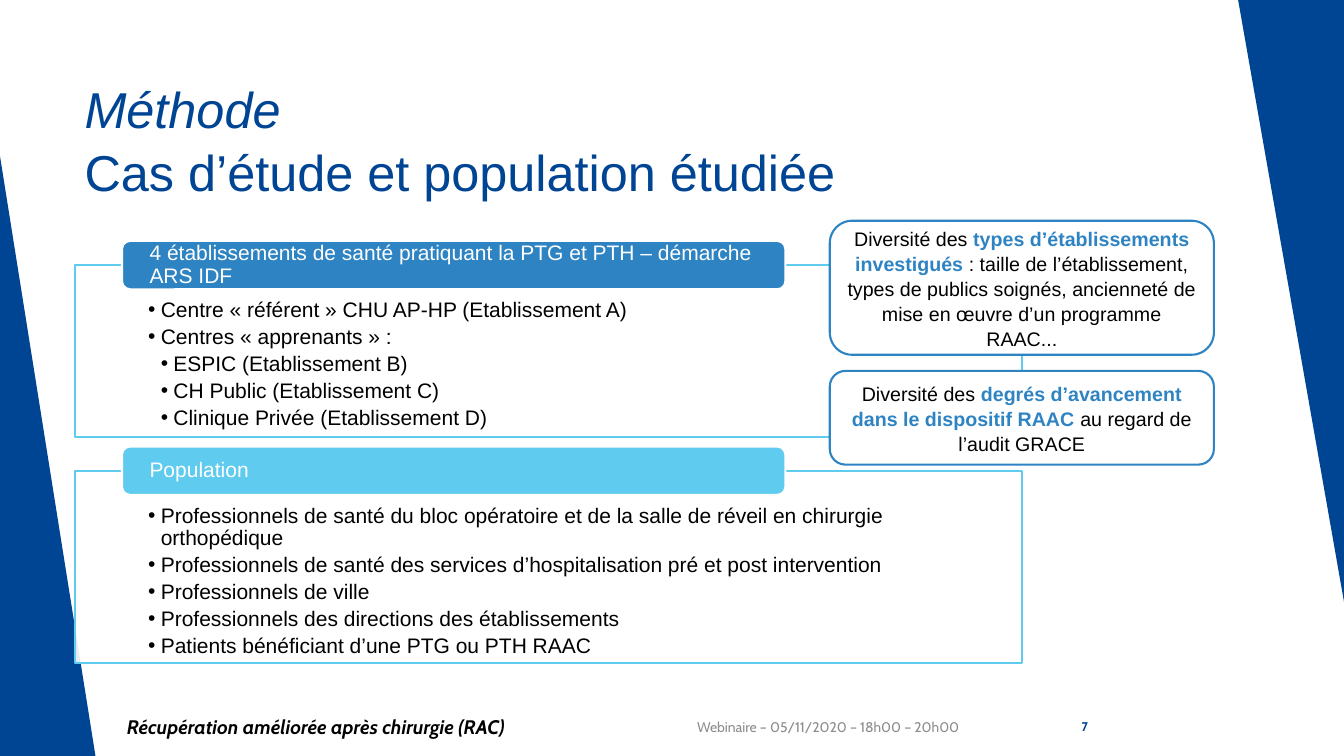
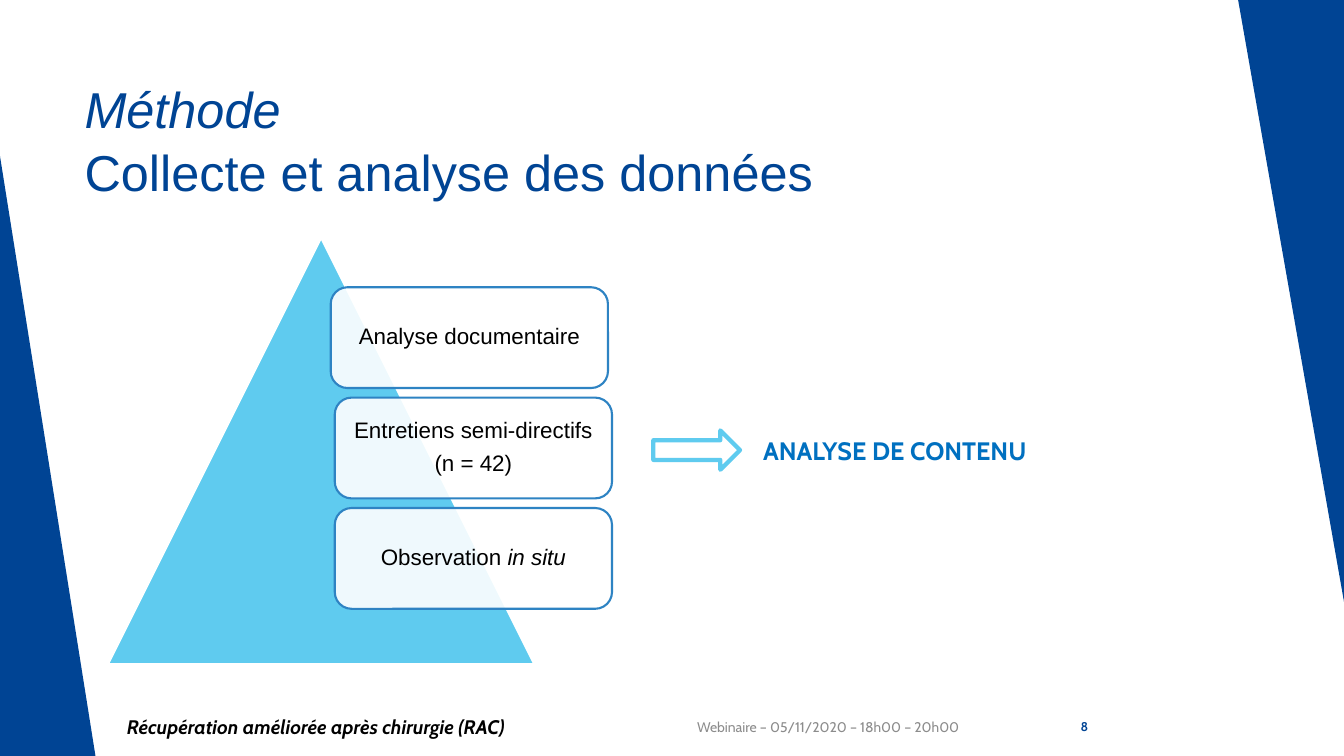
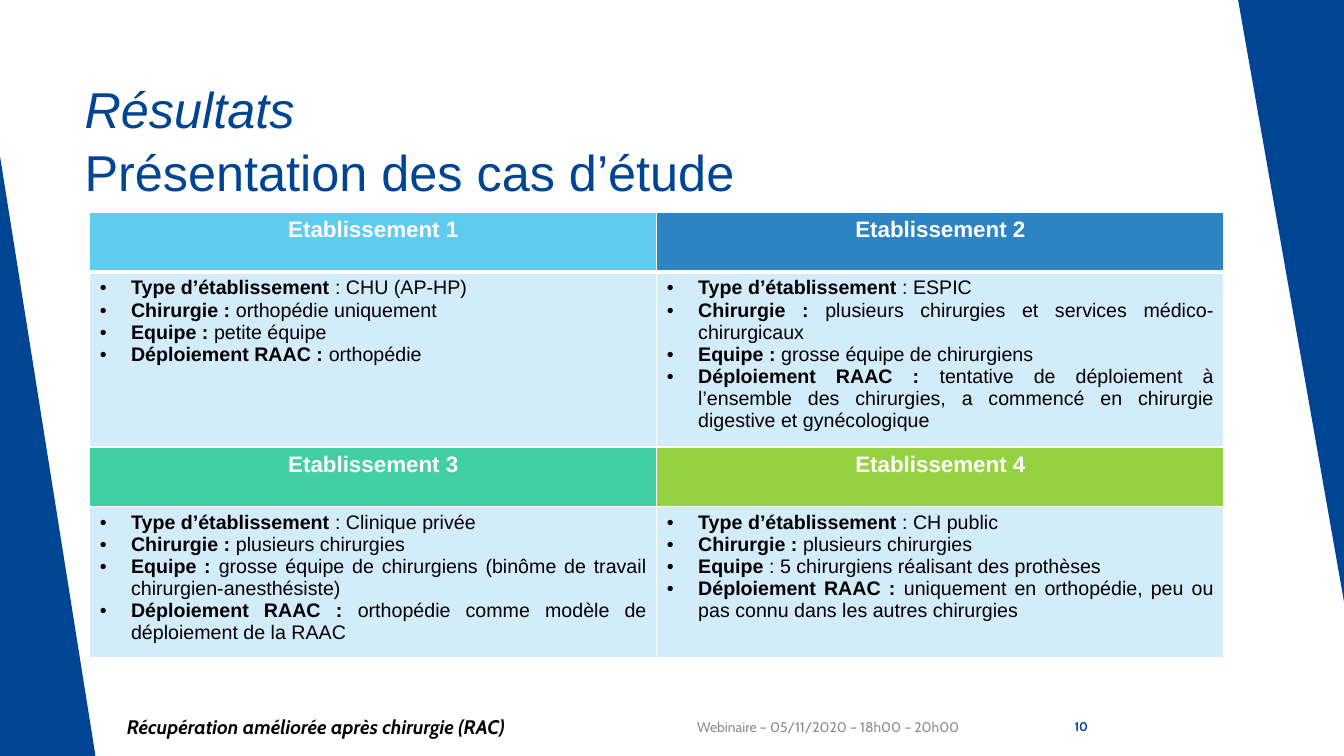
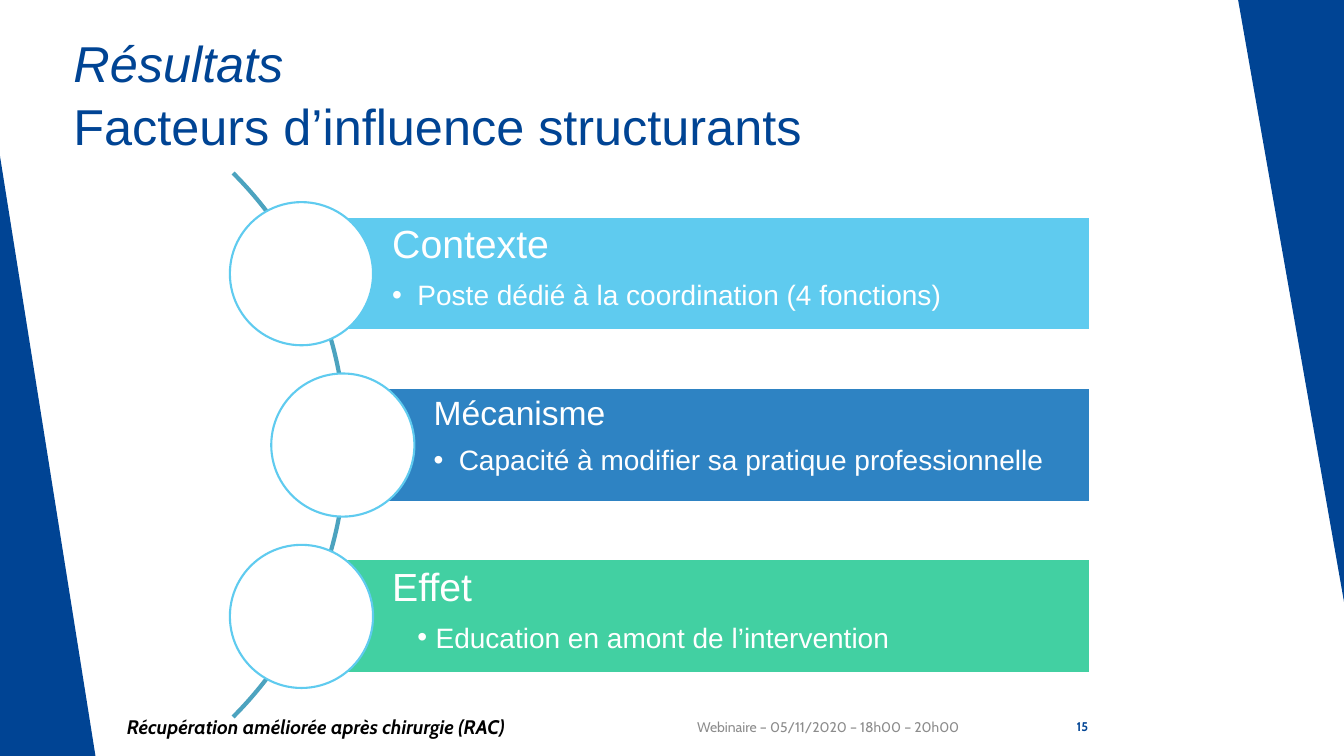
from lxml import etree
from pptx import Presentation
from pptx.dml.color import RGBColor
from pptx.enum.shapes import MSO_SHAPE as Shape
from pptx.enum.text import MSO_ANCHOR as Anchor, PP_ALIGN as Align
from pptx.oxml.ns import qn
from pptx.util import Inches, Pt

NAVY = RGBColor(0x00, 0x44, 0x94)
SKY = RGBColor(0x5F, 0xCB, 0xEF)
BLUE = RGBColor(0x2E, 0x83, 0xC3)
GREEN = RGBColor(0x42, 0xD0, 0xA2)
LIME = RGBColor(0x96, 0xD1, 0x41)
PALE = RGBColor(0xD2, 0xEC, 0xF9)
TEAL = RGBColor(0x4C, 0xA3, 0xBF)
ACCENT = RGBColor(0x00, 0x70, 0xC0)
GREY = RGBColor(0x8C, 0x8C, 0x8C)
BLACK = RGBColor(0, 0, 0)
WHITE = RGBColor(0xFF, 0xFF, 0xFF)

BODY_FONT = "Arial"
FOOTER_FONT = "Cabin"
CABIN_PITCH = 1.06


# Shared helpers
def add_text(frame, text, size=14, color=BLACK, font=BODY_FONT, bold=False, italic=False,
             align=Align.LEFT, gap=0, spacing=None, bullet=None):
    """Add one paragraph; text is a string or a list of strings and (string, format) pairs.

    bullet is (left indent, hanging width) in inches; gap is the space above, except at the top.
    """
    paragraph = frame.paragraphs[0]
    if paragraph.runs:
        paragraph = frame.add_paragraph()
        if gap:
            paragraph.space_before = Pt(gap)
    paragraph.alignment = align
    if spacing:
        paragraph.line_spacing = spacing
    if bullet:
        left, hang = bullet
        properties = paragraph._p.get_or_add_pPr()
        properties.set("marL", str(Inches(left)))
        properties.set("indent", str(-Inches(hang)))
        etree.SubElement(properties, qn("a:buFont"), typeface=BODY_FONT)
        etree.SubElement(properties, qn("a:buChar"), char="•")
    for part in [text] if isinstance(text, str) else text:
        words, changes = (part, {}) if isinstance(part, str) else part
        look = {"bold": bold, "italic": italic, "color": color, **changes}
        run = paragraph.add_run()
        run.text = words
        run.font.name = font
        run.font.size = Pt(size)
        run.font.bold = look["bold"]
        run.font.italic = look["italic"]
        run.font.color.rgb = look["color"]


def set_frame(frame, margins=(0.1, 0.05, 0.1, 0.05), anchor=Anchor.MIDDLE):
    frame.word_wrap = True
    frame.vertical_anchor = anchor
    (frame.margin_left, frame.margin_top,
     frame.margin_right, frame.margin_bottom) = map(Inches, margins)
    return frame


def add_box(slide, box, **options):
    return set_frame(slide.shapes.add_textbox(*map(Inches, box)).text_frame, **options)


def add_shape(slide, kind, box, fill=None, line=None, width=1.5, opacity=None):
    shape = slide.shapes.add_shape(kind, *map(Inches, box))
    shape.shadow.inherit = False
    if fill is None:
        shape.fill.background()
    else:
        shape.fill.solid()
        shape.fill.fore_color.rgb = fill
    if opacity:
        color = shape._element.spPr.find(qn("a:solidFill"))[0]
        etree.SubElement(color, qn("a:alpha"), val=str(opacity * 1000))
    if line is None:
        shape.line.fill.background()
    else:
        shape.line.color.rgb = line
        shape.line.width = Pt(width)
    return shape


def start_slide(presentation, section, title, number, corner=(0.74, 0.67)):
    """Blank slide with side bands, title and footer."""
    slide = presentation.slides.add_slide(presentation.slide_layouts[6])
    add_shape(slide, Shape.RIGHT_TRIANGLE, (0, 1.55, 0.95, 5.97), NAVY)
    add_shape(slide, Shape.RIGHT_TRIANGLE, (12.28, 0, 1.05, 5.97), NAVY).rotation = 180

    frame = add_box(slide, (*corner, 9.4, 1.44))
    add_text(frame, section, size=36, color=NAVY, italic=True)
    add_text(frame, title, size=36, color=NAVY, gap=2)

    add_text(add_box(slide, (6.72, 7.01, 2.89, 0.4)), "Webinaire – 05/11/2020 – 18h00 – 20h00",
             size=10, color=GREY, font=FOOTER_FONT, align=Align.RIGHT)
    add_text(add_box(slide, (1.16, 7.01, 5.35, 0.4)), "Récupération améliorée après chirurgie (RAC)",
             size=14, font=FOOTER_FONT, bold=True, italic=True)
    add_text(add_box(slide, (10.14, 7.01, 0.75, 0.4)), str(number),
             size=9, color=NAVY, font=FOOTER_FONT, bold=True, align=Align.RIGHT)
    return slide


# Slide: cases and population
def add_framed_list(slide, box, heading, color, items):
    """Outlined list whose heading tab straddles the top edge."""
    left, top, _, _ = box
    panel = add_shape(slide, Shape.RECTANGLE, box, WHITE, SKY, opacity=90)
    frame = set_frame(panel.text_frame, (0.73, 0.34, 0.73, 0.12), Anchor.TOP)
    for level, item in items:
        add_text(frame, item, size=15, spacing=0.9, gap=3, bullet=(0.125 * level, 0.125))
    tab = add_shape(slide, Shape.ROUNDED_RECTANGLE, (left + 0.47, top - 0.24, 6.58, 0.48), color, WHITE)
    add_text(set_frame(tab.text_frame, (0.25, 0, 0.25, 0)), heading, size=15, color=WHITE, spacing=0.9)


def add_callout(slide, box, before, key, after):
    callout = add_shape(slide, Shape.ROUNDED_RECTANGLE, box, WHITE, BLUE)
    add_text(set_frame(callout.text_frame), [before, (key, {"bold": True, "color": BLUE}), after],
             align=Align.CENTER, spacing=CABIN_PITCH)


def build_population(presentation):
    slide = start_slide(presentation, "Méthode", "Cas d’étude et population étudiée", 7)
    add_framed_list(slide, (0.74, 2.63, 9.4, 1.71),
                    "4 établissements de santé pratiquant la PTG et PTH – démarche ARS IDF", BLUE, [
                        (1, "Centre « référent » CHU AP-HP (Etablissement A)"),
                        (1, "Centres « apprenants » :"),
                        (2, "ESPIC (Etablissement B)"),
                        (2, "CH Public (Etablissement C)"),
                        (2, "Clinique Privée (Etablissement D)"),
                    ])
    add_framed_list(slide, (0.74, 4.67, 9.4, 1.91), "Population", SKY, [
        (1, "Professionnels de santé du bloc opératoire et de la salle de réveil en chirurgie orthopédique"),
        (1, "Professionnels de santé des services d’hospitalisation pré et post intervention"),
        (1, "Professionnels de ville"),
        (1, "Professionnels des directions des établissements"),
        (1, "Patients bénéficiant d’une PTG ou PTH RAAC"),
    ])
    add_callout(slide, (8.23, 2.19, 3.81, 1.33), "Diversité des ", "types d’établissements investigués ",
                ": taille de l’établissement, types de publics soignés, "
                "ancienneté de mise en œuvre d’un programme RAAC...")
    add_callout(slide, (8.23, 3.68, 3.81, 0.93), "Diversité des ",
                "degrés d’avancement dans le dispositif RAAC ", "au regard de l’audit GRACE")


# Slide: data collection
def add_pyramid(slide, left, top, side, methods):
    """Triangle with method cards stacked down its right edge."""
    add_shape(slide, Shape.ISOSCELES_TRIANGLE, (left, top, side, side), SKY, WHITE)
    for index, (offset, lines) in enumerate(methods):
        card = add_shape(slide, Shape.ROUNDED_RECTANGLE,
                         (left + offset, top + 0.49 + 1.095 * index, 2.75, 1), WHITE, BLUE, opacity=90)
        frame = set_frame(card.text_frame, (0.07,) * 4)
        for line in lines:
            add_text(frame, line, size=16, align=Align.CENTER, spacing=0.9, gap=6)


def build_collection(presentation):
    slide = start_slide(presentation, "Méthode", "Collecte et analyse des données", 8)
    add_pyramid(slide, 1.07, 2.36, 4.23, [
        (2.21, ["Analyse documentaire"]),
        (2.25, ["Entretiens semi-directifs", "(n = 42)"]),
        (2.25, [["Observation ", ("in situ", {"italic": True})]]),
    ])
    add_shape(slide, Shape.RIGHT_ARROW, (6.48, 4.27, 0.86, 0.39), line=SKY, width=3)
    add_text(add_box(slide, (7.47, 4.27, 2.97, 0.4), anchor=Anchor.TOP), "ANALYSE DE CONTENU",
             size=18, color=ACCENT, font=FOOTER_FONT, bold=True)


# Slide: table of cases
def fill_cell(cell, color, top=1, bottom=1):
    """Solid fill and white borders, with widths in points."""
    cell.fill.solid()
    cell.fill.fore_color.rgb = color
    properties = cell._tc.get_or_add_tcPr()
    for index, (side, width) in enumerate((("L", 1), ("R", 1), ("T", top), ("B", bottom))):
        line = etree.Element(qn(f"a:ln{side}"), w=str(Pt(width)))
        fill = etree.SubElement(line, qn("a:solidFill"))
        etree.SubElement(fill, qn("a:srgbClr"), val=str(WHITE))
        properties.insert(index, line)


def add_case_table(slide, left, top, width, heights, cases):
    """Two cases per band, each a heading cell above a list cell."""
    table = slide.shapes.add_table(4, 2, *map(Inches, (left, top, width, sum(heights)))).table
    table.first_row = table.horz_banding = False
    for row, height in zip(table.rows, heights):
        row.height = Inches(height)
    for index, (heading, color, facts) in enumerate(cases):
        band, column = divmod(index, 2)
        rule = 1 if band else 3
        head, body = table.cell(2 * band, column), table.cell(2 * band + 1, column)
        fill_cell(head, color, bottom=rule)
        fill_cell(body, PALE, top=rule)
        add_text(head.text_frame, heading, size=16, color=WHITE, bold=True, align=Align.CENTER)
        for label, value in facts:
            add_text(body.text_frame, [(label, {"bold": True}), value],
                     align=Align.JUSTIFY, bullet=(0.31, 0.31))


def build_cases(presentation):
    slide = start_slide(presentation, "Résultats", "Présentation des cas d’étude", 10)
    kind, surgery, team, rollout = ("Type d’établissement ", "Chirurgie : ", "Equipe : ", "Déploiement RAAC : ")
    add_case_table(slide, 0.89, 2.11, 11.25, (0.59, 1.63, 0.59, 1.41), [
        ("Etablissement 1", SKY, [
            (kind, ": CHU (AP-HP)"),
            (surgery, "orthopédie uniquement"),
            (team, "petite équipe"),
            (rollout, "orthopédie")]),
        ("Etablissement 2", BLUE, [
            (kind, ": ESPIC"),
            (surgery, "plusieurs chirurgies et services médico-chirurgicaux"),
            (team, "grosse équipe de chirurgiens"),
            (rollout, "tentative de déploiement à l’ensemble des chirurgies, "
                      "a commencé en chirurgie digestive et gynécologique")]),
        ("Etablissement 3", GREEN, [
            (kind, ": Clinique privée"),
            (surgery, "plusieurs chirurgies"),
            (team, "grosse équipe de chirurgiens (binôme de travail chirurgien-anesthésiste)"),
            (rollout, "orthopédie comme modèle de déploiement de la RAAC")]),
        ("Etablissement 4", LIME, [
            (kind, ": CH public"),
            (surgery, "plusieurs chirurgies"),
            ("Equipe", " : 5 chirurgiens réalisant des prothèses"),
            (rollout, "uniquement en orthopédie, peu ou pas connu dans les autres chirurgies")]),
    ])


# Slide: structuring factors
def add_factor(slide, left, top, right, color, heading, size, detail, bullet):
    """Coloured bar with a white disc centred on its left end."""
    height, disc = 1.13, 1.42
    bar = add_shape(slide, Shape.RECTANGLE, (left, top, right - left, height), color, WHITE)
    frame = set_frame(bar.text_frame, (0.9, 0.08, 0.08, 0.08), Anchor.TOP)
    add_text(frame, heading, size=size, color=WHITE, spacing=0.9)
    add_text(frame, detail, size=20, color=WHITE, spacing=0.9, gap=10, bullet=bullet)
    add_shape(slide, Shape.OVAL, (left - disc / 2, top + (height - disc) / 2, disc, disc), WHITE, SKY)


def build_factors(presentation):
    slide = start_slide(presentation, "Résultats", "Facteurs d’influence structurants", 15, (0.63, 0.21))
    arc = add_shape(slide, Shape.ARC, (-4.2, 0.6, 7.63, 7.63), line=TEAL, width=3)
    arc.adjustments[0], arc.adjustments[1] = 189, 27  # from 315° to 45°
    factors = [
        (2.99, SKY, "Contexte", 28, "Poste dédié à la coordination (4 fonctions)", (0.25, 0.25)),
        (3.4, BLUE, "Mécanisme", 24, "Capacité à modifier sa pratique professionnelle", (0.25, 0.25)),
        (2.99, GREEN, "Effet", 28, "Education en amont de l’intervention", (0.43, 0.18)),
    ]
    for index, (left, *content) in enumerate(factors):
        add_factor(slide, left, 2.15 + 1.7 * index, 10.81, *content)


def main():
    presentation = Presentation()
    presentation.slide_width = Inches(13.33)
    presentation.slide_height = Inches(7.5)
    for build in (build_population, build_collection, build_cases, build_factors):
        build(presentation)
    presentation.save("out.pptx")


if __name__ == "__main__":
    main()
